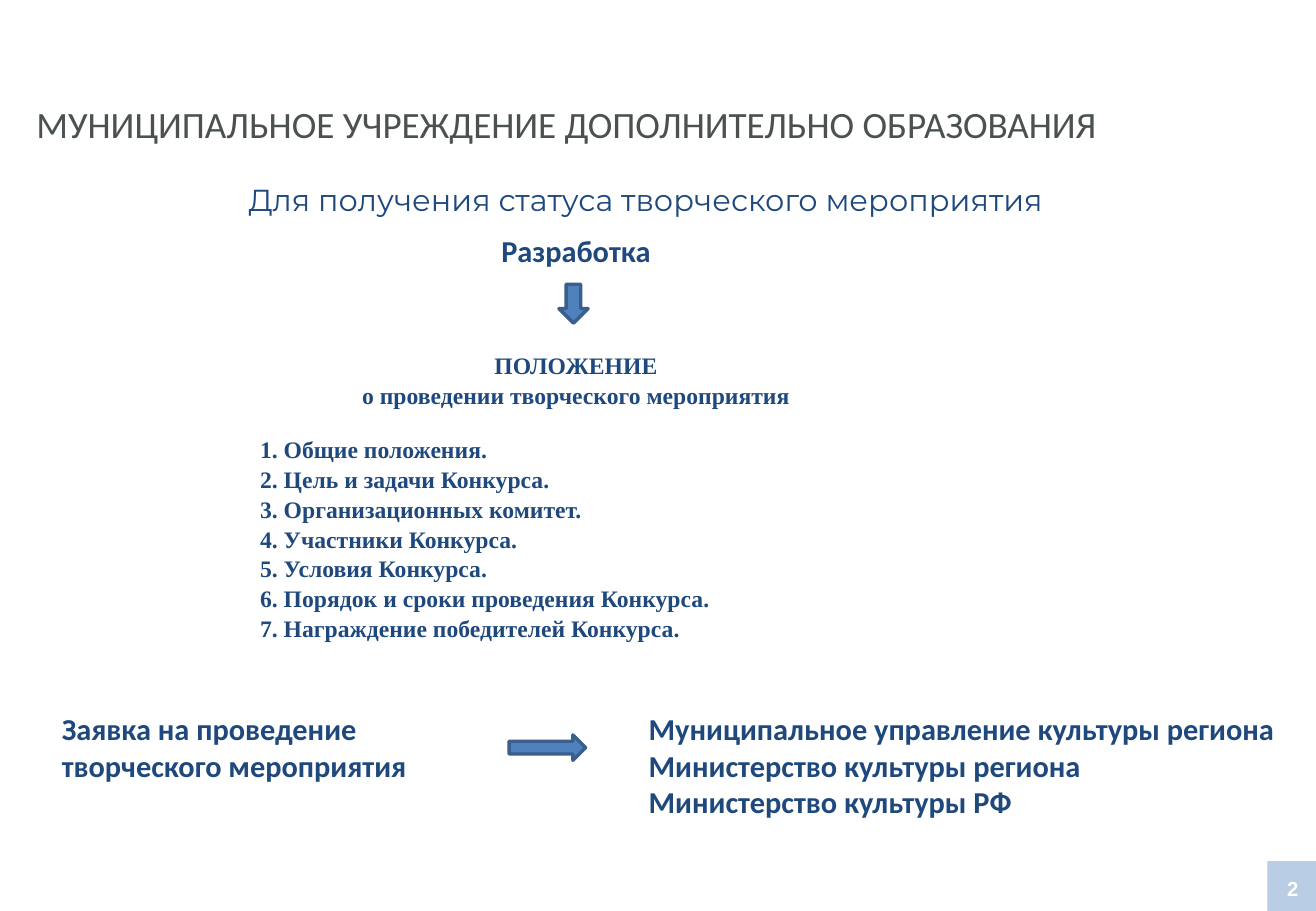
from pptx import Presentation
from pptx.dml.color import RGBColor
from pptx.enum.shapes import MSO_SHAPE as Shape
from pptx.enum.text import MSO_ANCHOR as Anchor, PP_ALIGN as Align
from pptx.util import Inches, Pt
from lxml.etree import SubElement
from pptx.oxml.ns import qn

NAVY = RGBColor(0x1F, 0x49, 0x7D)
GRAY = RGBColor(0x4B, 0x50, 0x50)
BLUE = RGBColor(0x4F, 0x81, 0xBD)
DARK_BLUE = RGBColor(0x3A, 0x5F, 0x8C)
PALE_BLUE = RGBColor(0xB9, 0xCD, 0xE5)
WHITE = RGBColor(0xFF, 0xFF, 0xFF)

REGULATION_HEADING = ["ПОЛОЖЕНИЕ", "о проведении творческого мероприятия"]
REGULATION_SECTIONS = [
    "Общие положения.",
    "Цель и задачи Конкурса.",
    "Организационных комитет.",
    "Участники Конкурса.",
    "Условия Конкурса.",
    "Порядок и сроки проведения Конкурса.",
    "Награждение победителей Конкурса.",
]
AUTHORITIES = [
    "Муниципальное управление культуры региона",
    "Министерство культуры региона",
    "Министерство культуры РФ",
]


def place(shape, left, top, width, height):
    shape.left, shape.top = Inches(left), Inches(top)
    shape.width, shape.height = Inches(width), Inches(height)


def write(shape, lines, size=18, font="Calibri", color=NAVY, bold=True,
          align=Align.LEFT, anchor=Anchor.TOP, wrap=True, inset=None):
    frame = shape.text_frame
    frame.text = "\n".join(lines)
    frame.word_wrap = wrap
    frame.vertical_anchor = anchor
    if inset is not None:
        frame.margin_left = frame.margin_right = Inches(inset)
        frame.margin_top = frame.margin_bottom = Inches(inset)
    for para in frame.paragraphs:
        para.alignment = align
        para.space_before = Pt(0)
        for span in para.runs:
            span.font.name = font
            span.font.size = Pt(size)
            span.font.bold = bold
            span.font.color.rgb = color


def add_text(page, box, lines, **style):
    shape = page.shapes.add_textbox(*map(Inches, box))
    write(shape, lines, **style)


def add_filled(page, kind, box, fill, line=None):
    shape = page.shapes.add_shape(kind, *map(Inches, box))
    shape.shadow.inherit = False
    shape.fill.solid()
    shape.fill.fore_color.rgb = fill
    if line is None:
        shape.line.fill.background()
    else:
        shape.line.color.rgb = line
        shape.line.width = Pt(2)


def fill_regulation(body):
    place(body, 2.04, 2.83, 5.4, 2.63)
    sections = [f"{number}. {name}"
                for number, name in enumerate(REGULATION_SECTIONS, 1)]
    write(body, REGULATION_HEADING + sections, size=14, font="Times New Roman")
    heading_count = len(REGULATION_HEADING)
    for index, para in enumerate(body.text_frame.paragraphs):
        para.line_spacing = 1.05
        if index < heading_count:
            para.alignment = Align.CENTER
        else:
            para.alignment = Align.JUSTIFY
        if index == heading_count:
            para.space_before = Pt(14.5)
        # No bullet, no hanging indent
        properties = para._p.get_or_add_pPr()
        properties.set("marL", "0")
        properties.set("indent", "0")
        SubElement(properties, qn("a:buNone"))


def main():
    deck = Presentation()
    deck.slide_width, deck.slide_height = Inches(10.83), Inches(7.5)
    page = deck.slides.add_slide(deck.slide_layouts[1])

    # Title and subtitle
    title = page.shapes.title
    place(title, 0.25, 0.78, 9.8, 0.47)
    write(title, ["МУНИЦИПАЛЬНОЕ УЧРЕЖДЕНИЕ ДОПОЛНИТЕЛЬНО ОБРАЗОВАНИЯ"],
          size=22, color=GRAY, bold=False, anchor=Anchor.MIDDLE, inset=0.05)
    add_text(page, (1.85, 1.44, 6.93, 0.4),
             ["Для получения статуса творческого мероприятия"],
             font="Montserrat", bold=False, align=Align.CENTER)

    # Drafting the regulation
    add_text(page, (4.02, 1.86, 1.44, 0.4), ["Разработка"],
             align=Align.CENTER, wrap=False)
    add_filled(page, Shape.DOWN_ARROW, (4.6, 2.34, 0.24, 0.32), BLUE, DARK_BLUE)
    fill_regulation(page.placeholders[1])

    # Application and its recipients
    add_text(page, (0.41, 5.8, 3.78, 0.71),
             ["Заявка на проведение творческого мероприятия"])
    add_filled(page, Shape.RIGHT_ARROW, (4.19, 6.05, 0.63, 0.21), BLUE, DARK_BLUE)
    add_text(page, (5.24, 5.8, 5.4, 1.01), AUTHORITIES, wrap=False)

    # Page number
    add_filled(page, Shape.RECTANGLE, (10.43, 7.09, 0.4, 0.41), PALE_BLUE)
    add_text(page, (10.46, 7.17, 0.36, 0.29), ["2"], size=12, font="Arial",
             color=WHITE, align=Align.CENTER, anchor=Anchor.MIDDLE, inset=0.05)

    deck.save("out.pptx")


if __name__ == "__main__":
    main()
